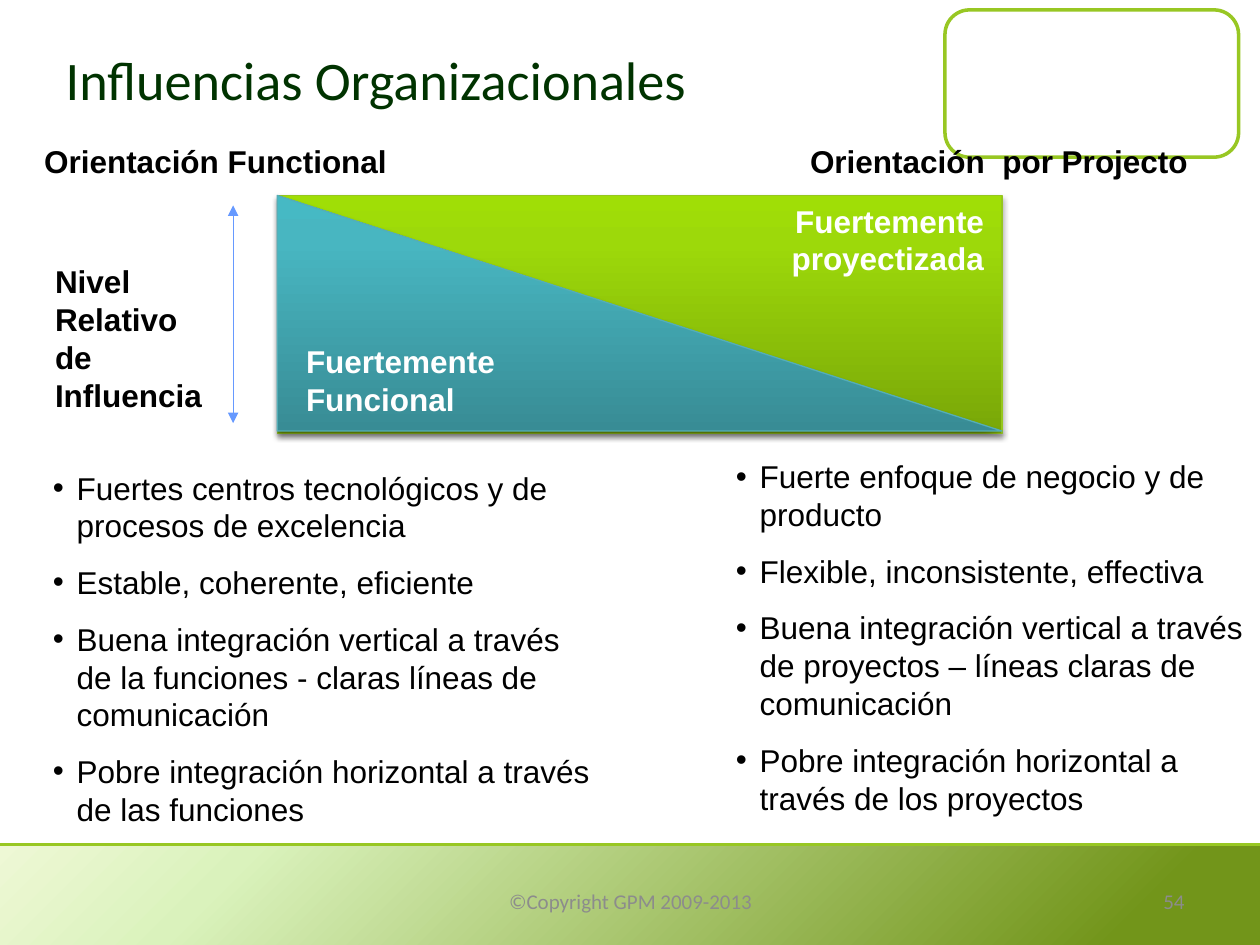
"""Build the slide on organizational influences, from functional to project orientation."""
from dataclasses import dataclass

from lxml import etree
from pptx import Presentation
from pptx.dml.color import RGBColor
from pptx.enum.shapes import MSO_CONNECTOR, MSO_SHAPE
from pptx.enum.text import MSO_ANCHOR, MSO_AUTO_SIZE, PP_ALIGN
from pptx.oxml.ns import qn
from pptx.util import Cm, Pt

LEFT, CENTER, RIGHT = PP_ALIGN.LEFT, PP_ALIGN.CENTER, PP_ALIGN.RIGHT
TOP, MIDDLE = MSO_ANCHOR.TOP, MSO_ANCHOR.MIDDLE
RECTANGLE, ROUNDED = MSO_SHAPE.RECTANGLE, MSO_SHAPE.ROUNDED_RECTANGLE
TRIANGLE, STRAIGHT = MSO_SHAPE.RIGHT_TRIANGLE, MSO_CONNECTOR.STRAIGHT
NO_AUTOFIT = MSO_AUTO_SIZE.NONE
TWO_CONTENT = 3


@dataclass(frozen=True)
class Theme:
    """Colours, fonts and type sizes."""
    title: str = "003300"
    text: str = "000000"
    white: str = "FFFFFF"
    footer: str = "8C8C8C"
    accent: str = "98C723"
    arrow: str = "6699FF"
    project_line: str = "96C71E"
    functional_line: str = "55AEB7"
    band: tuple = ((0, "EEF8D5"), (19, "DAF2BC"), (89, "72951A"))
    project: tuple = ((0, "79A708"), (80, "9DD90A"), (100, "A0DE06"))
    functional: tuple = ((0, "388C95"), (80, "48B6C1"), (100, "46B9C4"))
    heading_font: str = "Calibri"
    body_font: str = "Arial"
    title_size: float = 31
    body_size: float = 18
    footer_size: float = 12
    bullet_gap: float = 10.8


@dataclass(frozen=True)
class Area:
    """A rectangle in centimetres."""
    left: float
    top: float
    width: float
    height: float

    def lengths(self) -> tuple:
        """Return left, top, width and height as lengths."""
        return Cm(self.left), Cm(self.top), Cm(self.width), Cm(self.height)


@dataclass(frozen=True)
class Label:
    """A short text and its format."""
    text: str
    area: Area
    color: str
    align: PP_ALIGN = LEFT
    anchor: MSO_ANCHOR = TOP
    font: str = "Arial"
    size: float = 18
    bold: bool = True


@dataclass(frozen=True)
class BulletList:
    """A list for one body placeholder."""
    index: int
    area: Area
    items: tuple


THEME = Theme()
FOOTER = dict(color=THEME.footer, anchor=MIDDLE, font=THEME.heading_font,
              size=THEME.footer_size, bold=False)
LABELS = (
    Label("Orientación Functional", Area(0.64, 2.74, 8.53, 1.02), THEME.text),
    Label("Orientación  por Projecto", Area(16.08, 2.74, 8.71, 1.02), THEME.text),
    Label("Fuertemente Funcional", Area(5.92, 6.78, 5.41, 1.8), THEME.white),
    Label("Fuertemente proyectizada", Area(14.63, 3.94, 5.46, 1.8), THEME.white, RIGHT),
    Label("Nivel Relativo de Influencia", Area(0.86, 5.16, 3.84, 3.33), THEME.text),
    Label("©Copyright GPM 2009-2013", Area(8.69, 17.65, 8.05, 1.02), align=CENTER, **FOOTER),
    Label("54", Area(18.21, 17.65, 5.92, 1.02), align=RIGHT, **FOOTER),
)
LISTS = (
    BulletList(1, Area(0.81, 9.32, 11.48, 7.8), (
        "Fuertes centros tecnológicos y de procesos de excelencia",
        "Estable, coherente, eficiente",
        "Buena integración vertical a través de la funciones - claras líneas de comunicación",
        "Pobre integración horizontal a través de las funciones")),
    BulletList(2, Area(14.58, 9.09, 10.82, 7.8), (
        "Fuerte enfoque de negocio y de producto",
        "Flexible, inconsistente, effectiva",
        "Buena integración vertical a través de proyectos – líneas claras de comunicación",
        "Pobre integración horizontal a través de los proyectos")),
)


def write(para, text: str, *, color: str, font: str, size: float,
          bold: bool = False, align: PP_ALIGN = LEFT) -> None:
    """Write a formatted text into a paragraph."""
    para.alignment = align
    span = para.add_run()
    span.text = text
    span.font.name, span.font.size, span.font.bold = font, Pt(size), bold
    span.font.color.rgb = RGBColor.from_string(color)


def place(box, area: Area, anchor: MSO_ANCHOR):
    """Position a text shape and return its prepared text frame."""
    box.left, box.top, box.width, box.height = area.lengths()
    frame = box.text_frame
    frame.word_wrap, frame.auto_size, frame.vertical_anchor = True, NO_AUTOFIT, anchor
    return frame


def add_label(page, label: Label) -> None:
    """Add a text box."""
    frame = place(page.shapes.add_textbox(*label.area.lengths()), label.area, label.anchor)
    write(frame.paragraphs[0], label.text, color=label.color, font=label.font,
          size=label.size, bold=label.bold, align=label.align)


def fill_list(page, bullets: BulletList) -> None:
    """Fill a body placeholder with bulleted paragraphs."""
    frame = place(page.placeholders[bullets.index], bullets.area, TOP)
    for number, item in enumerate(bullets.items):
        para = frame.add_paragraph() if number else frame.paragraphs[0]
        properties = para._p.get_or_add_pPr()
        properties.set("marL", str(Cm(0.48)))
        properties.set("indent", str(-Cm(0.48)))
        etree.SubElement(properties, qn("a:buChar"), char="•")
        para.space_before = Pt(THEME.bullet_gap if number else 0)
        write(para, item, color=THEME.text, font=THEME.body_font, size=THEME.body_size)


def add_color(parent, color: str):
    """Append a colour element."""
    return etree.SubElement(parent, qn("a:srgbClr"), val=color)


def add_panel(page, kind: MSO_SHAPE, area: Area, *, line: str = "", weight: float = 0.75):
    """Add a white shape without shadow, outlined if a line colour is given."""
    panel = page.shapes.add_shape(kind, *area.lengths())
    panel.shadow.inherit = False
    panel.fill.solid()
    panel.fill.fore_color.rgb = RGBColor.from_string(THEME.white)
    if line:
        panel.line.color.rgb = RGBColor.from_string(line)
        panel.line.width = Pt(weight)
    else:
        panel.line.fill.background()
    return panel


def shade(panel, stops: tuple, angle: float) -> None:
    """Give a shape a linear gradient, its angle counted counter-clockwise."""
    panel.fill.gradient()
    panel.fill.gradient_angle = angle
    stop_list = panel._element.spPr.find(qn("a:gradFill")).find(qn("a:gsLst"))
    for old in list(stop_list):
        stop_list.remove(old)
    for percent, color in stops:
        add_color(etree.SubElement(stop_list, qn("a:gs"), pos=str(percent * 1000)), color)


def cast_shadow(panel) -> None:
    """Drop a soft shadow straight down."""
    effects = panel._element.spPr.find(qn("a:effectLst"))
    shadow = etree.SubElement(effects, qn("a:outerShdw"), blurRad=str(Pt(3.1)),
                              dist=str(Pt(1.8)), dir="5400000", rotWithShape="0")
    etree.SubElement(add_color(shadow, THEME.text), qn("a:alpha"), val="35000")


def add_line(page, start: tuple, end: tuple, *, color: str, weight: float,
             arrows: bool = False) -> None:
    """Add a straight line, with arrowheads at both ends if asked."""
    points = (Cm(value) for value in (*start, *end))
    line = page.shapes.add_connector(STRAIGHT, *points)
    line.line.color.rgb = RGBColor.from_string(color)
    line.line.width = Pt(weight)
    if arrows:
        for name in ("a:headEnd", "a:tailEnd"):
            etree.SubElement(line.line._get_or_add_ln(), qn(name), type="triangle")
    etree.SubElement(line._element.spPr, qn("a:effectLst"))


def main() -> None:
    """Build and save the deck."""
    deck = Presentation()
    deck.slide_width, deck.slide_height = Cm(25.4), Cm(19.05)
    page = deck.slides.add_slide(deck.slide_layouts[TWO_CONTENT])
    add_panel(page, ROUNDED, Area(19.05, 0.2, 5.92, 2.97), line=THEME.accent, weight=2)
    shade(add_panel(page, RECTANGLE, Area(0, 17.04, 25.4, 2.01)), THEME.band, 315)
    add_line(page, (0, 17.02), (25.4, 17.02), color=THEME.accent, weight=1.5)
    title = place(page.shapes.title, Area(1.07, 0, 17.15, 3.18), MIDDLE)
    write(title.paragraphs[0], "Influencias Organizacionales", color=THEME.title,
          font=THEME.heading_font, size=THEME.title_size)
    for kind, height, line, stops in (
            (RECTANGLE, 4.8, THEME.project_line, THEME.project),
            (TRIANGLE, 4.75, THEME.functional_line, THEME.functional)):
        panel = add_panel(page, kind, Area(5.59, 3.94, 14.61, height), line=line)
        shade(panel, stops, 90)
        cast_shadow(panel)
    add_line(page, (4.7, 4.14), (4.7, 8.53), color=THEME.arrow, weight=0.75, arrows=True)
    for bullets in LISTS:
        fill_list(page, bullets)
    for label in LABELS:
        add_label(page, label)
    deck.save("out.pptx")


if __name__ == "__main__":
    main()
